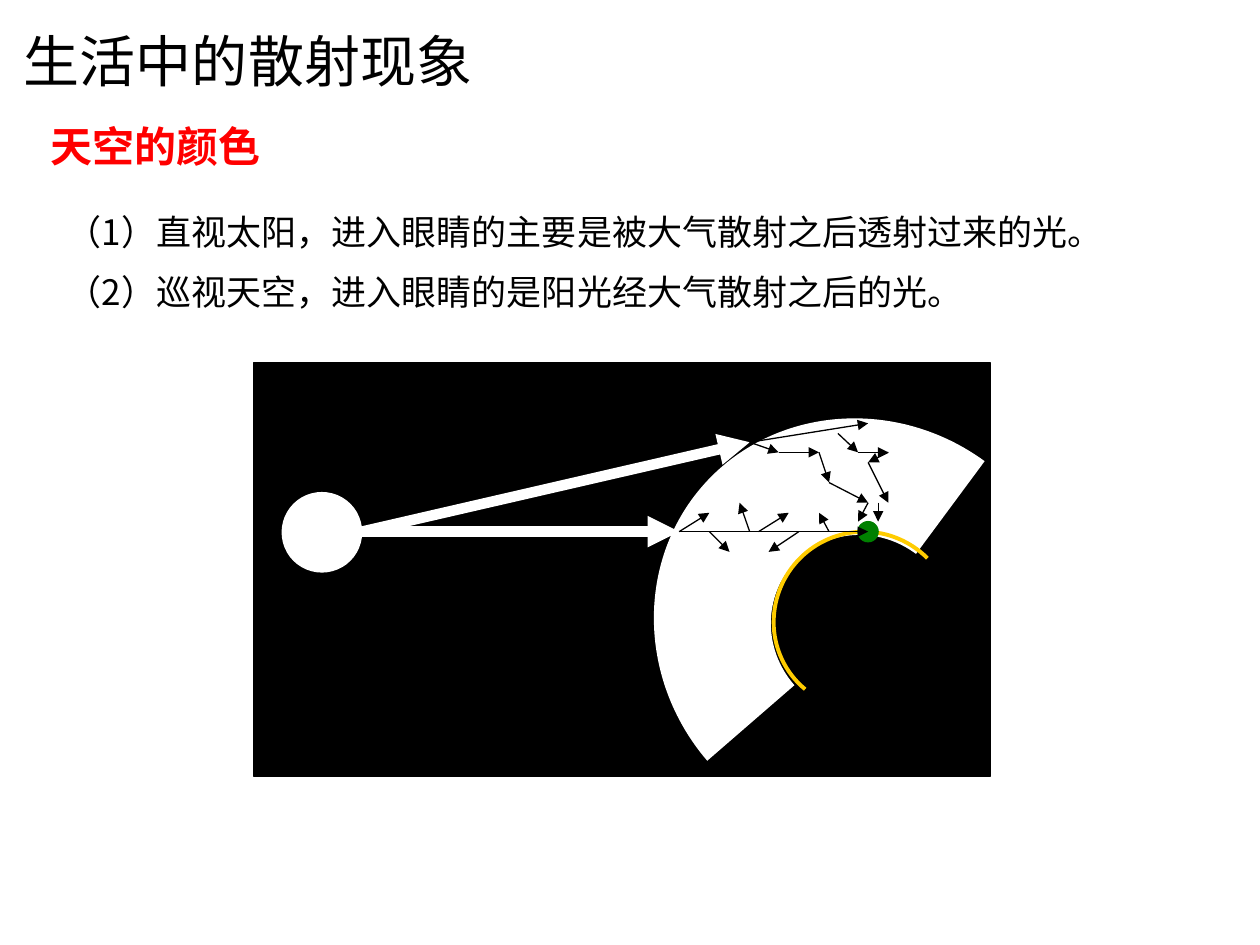
from lxml.etree import SubElement as Sub
from pptx import Presentation
from pptx.dml.color import RGBColor as RGB
from pptx.enum.shapes import MSO_CONNECTOR as Conn, MSO_SHAPE as Shape
from pptx.enum.text import MSO_ANCHOR as Anchor, MSO_AUTO_SIZE as Auto, PP_ALIGN as Align
from pptx.oxml.ns import qn
from pptx.util import Inches, Pt

HUES = {"ink": "000000", "paper": "FFFFFF", "red": "FF0000",
        "gold": "FFCC00", "green": "008000"}
FONT = "Noto Sans CJK SC"

AIR_BOX = (5.23, 3.28, 3.24, 3.39)
AIR_TURN = 312.8
AIR_IN = [(-0.71, -0.08), (-0.67, -0.46), (-0.36, -0.74), (0, -0.74)]
AIR_OUT = [(1.62, -0.18), (1.52, -1.04), (0.82, -1.69), (0, -1.69)]
GROUND = [(6.39, 5.47), (6.23, 5.34), (6.14, 5.14), (6.14, 4.94),
          (6.14, 4.54), (6.46, 4.22), (6.86, 4.22),
          (7.05, 4.22), (7.23, 4.3), (7.36, 4.43)]

SUN = (2.87, 4.22)
LOW = (5.39, 4.22)
HIGH = (5.95, 3.51)
RAYS = [
    [LOW, (6.89, 4.22)],
    [LOW, (5.63, 4.07)],
    [(5.63, 4.22), (5.79, 4.38)],
    [(6.02, 4.22), (6.26, 4.07)],
    [(6.34, 4.22), (6.1, 4.38)],
    [(5.95, 4.22), (5.87, 3.99)],
    [(6.58, 4.22), (6.5, 4.07)],
    [HIGH, (6.89, 3.36)],
    [HIGH, (6.18, 3.59), (6.5, 3.59), (6.58, 3.83), (6.89, 3.99), (6.81, 4.14)],
    [(6.65, 3.44), (6.81, 3.59), (7.05, 3.59), (6.89, 3.67), (7.05, 3.99)],
    [(6.97, 3.99), (6.97, 4.14)],
]


def bow(half):
    left, top, width, height = AIR_BOX
    knots = half + [(-x, y) for x, y in reversed(half[:-1])]
    return [(left + width / 2 + x, top + height / 2 + y) for x, y in knots]


class Deck:
    def __init__(self):
        self.file = Presentation()
        self.file.slide_width, self.file.slide_height = Inches(10), Inches(7.5)
        self.slide = self.file.slides.add_slide(self.file.slide_layouts[1])
        self.group = self.slide.shapes.add_group_shape().shapes

    def hue(self, name):
        return RGB.from_string(HUES[name])

    def place(self, shape, at):
        shape.left, shape.top, shape.width, shape.height = map(Inches, at)

    def text(self, box, at, lines, size, hue="ink", bold=False, anchor=Anchor.TOP,
             align=Align.LEFT, before=0, space=1.0):
        self.place(box, at)
        frame = box.text_frame
        frame.word_wrap, frame.auto_size = True, Auto.NONE
        frame.vertical_anchor = anchor
        for i, line in enumerate(lines):
            para = frame.add_paragraph() if i else frame.paragraphs[0]
            para.alignment, para.line_spacing = align, space
            para.space_before = Pt(before)
            props = para._p.get_or_add_pPr()
            props.set("marL", "0")
            props.set("indent", "0")
            Sub(props, qn("a:buNone"))
            run = para.add_run()
            run.text = line
            font = run.font
            font.size, font.bold, font.name = Pt(size), bold, FONT
            font.color.rgb = self.hue(hue)
            Sub(run._r.get_or_add_rPr(), qn("a:ea")).set("typeface", FONT)

    def title(self, *args, **style):
        self.text(self.slide.shapes.title, *args, **style)

    def body(self, *args, **style):
        self.text(self.slide.placeholders[1], *args, **style)

    def label(self, at, *args, **style):
        box = self.slide.shapes.add_textbox(*map(Inches, at))
        self.text(box, at, *args, **style)

    def paint(self, shape, fill=None, line=None, width=0.75):
        shape.shadow.inherit = False
        if fill:
            shape.fill.solid()
            shape.fill.fore_color.rgb = self.hue(fill)
        else:
            shape.fill.background()
        if line:
            shape.line.color.rgb = self.hue(line)
            shape.line.width = Pt(width)
        else:
            shape.line.fill.background()

    def shape(self, kind, at, hue):
        self.paint(self.group.add_shape(kind, *map(Inches, at)), hue, hue)

    def free(self, curves, close, **style):
        points = [tuple(map(Inches, knot)) for knots in curves for knot in knots]
        pen = self.group.build_freeform(*points[0])
        pen.add_line_segments(points[1:], close=close)
        shape = pen.convert_to_shape()
        steps = list(shape._element.iter(qn("a:lnTo")))
        for knots in curves:
            for i in range(0, len(knots) - 1, 3):
                bend = steps[i].makeelement(qn("a:cubicBezTo"))
                steps[i].addprevious(bend)
                for step in steps[i:i + 3]:
                    bend.append(step[0])
                    step.getparent().remove(step)
            steps = steps[len(knots):]
        self.paint(shape, **style)
        return shape

    def turn(self, shape, at, angle):
        self.place(shape, at)
        outline = next(shape._element.iter(qn("a:path")))
        outline.set("w", str(shape.width))
        outline.set("h", str(shape.height))
        shape.rotation = angle

    def arrow(self, start, end, hue="ink", width=0.75):
        line = self.group.add_connector(Conn.STRAIGHT, *map(Inches, start + end))
        line.line.color.rgb = self.hue(hue)
        line.line.width = Pt(width)
        Sub(line.line._get_or_add_ln(), qn("a:tailEnd")).set("type", "triangle")
        Sub(line._element.spPr, qn("a:effectLst"))


def main():
    deck = Deck()
    deck.title((0.09, 0.08, 9.45, 0.79), ["生活中的散射现象"], 32,
               anchor=Anchor.MIDDLE, align=Align.JUSTIFY, before=18)
    deck.label((0.3, 0.91, 7.96, 0.5), ["天空的颜色"], 24, hue="red", bold=True)
    deck.body((0.43, 1.55, 9.13, 0.99),
              ["（1）直视太阳，进入眼睛的主要是被大气散射之后透射过来的光。",
               "（2）巡视天空，进入眼睛的是阳光经大气散射之后的光。"],
              20, before=6, space=1.2)

    deck.shape(Shape.RECTANGLE, (2.01, 2.88, 5.85, 3.28), "ink")
    deck.shape(Shape.OVAL, (2.24, 3.91, 0.63, 0.63), "paper")
    air = deck.free([bow(AIR_IN), bow(AIR_OUT)], True, fill="paper")
    deck.turn(air, AIR_BOX, AIR_TURN)
    deck.free([GROUND], False, line="gold", width=2.25)
    deck.arrow(SUN, LOW, "paper", 6)
    deck.shape(Shape.OVAL, (6.81, 4.14, 0.16, 0.16), "green")
    deck.arrow(SUN, HIGH, "paper", 6)
    for ray in RAYS:
        for start, end in zip(ray, ray[1:]):
            deck.arrow(start, end)
    deck.file.save("out.pptx")


if __name__ == "__main__":
    main()
